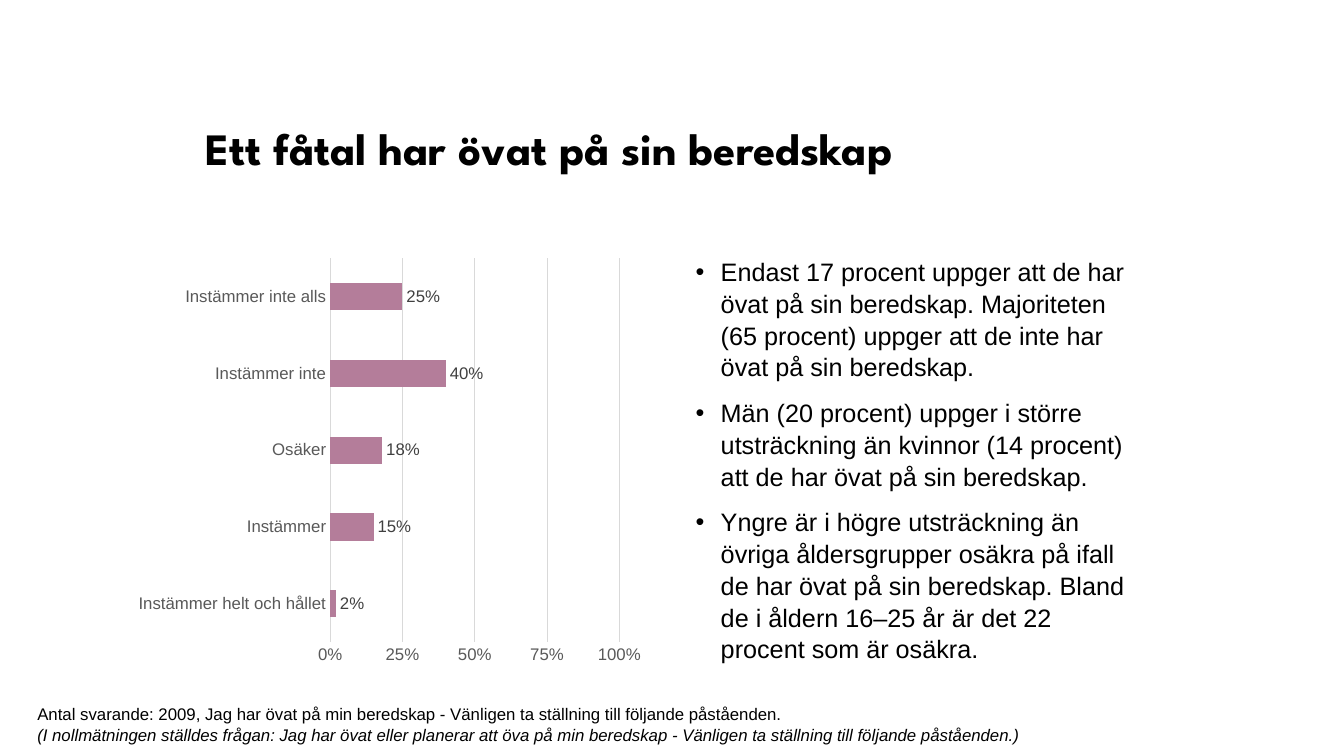
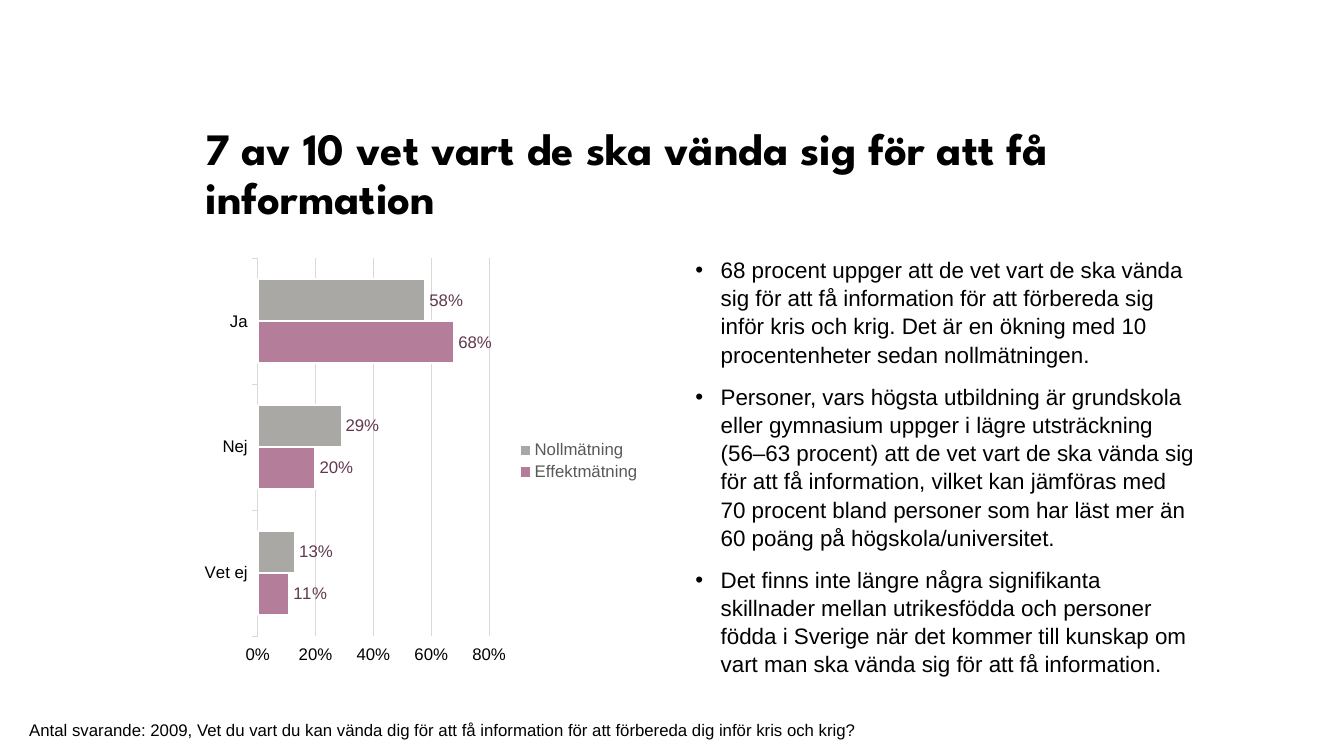
from dataclasses import dataclass
from typing import Any, Optional

import lxml.etree
import pptx
import pptx.chart.axis
import pptx.chart.data
import pptx.dml.color
import pptx.enum.chart
import pptx.oxml.ns
import pptx.slide
import pptx.text.text
import pptx.util

Inches = pptx.util.Inches
Pt = pptx.util.Pt
RGBColor = pptx.dml.color.RGBColor
TickMark = pptx.enum.chart.XL_TICK_MARK


@dataclass(frozen=True)
class Theme:
    heading_font: str = "League Spartan"
    body_font: str = "Arial"
    title_size: int = 32
    small_size: int = 12
    black: str = "000000"
    white: str = "FFFFFF"
    mauve: str = "B47D9A"
    plum: str = "61384D"
    grey: str = "A9A8A4"
    grid: str = "D9D9D9"
    dark_grey: str = "595959"
    label_grey: str = "404040"


THEME = Theme()


@dataclass(frozen=True)
class Box:
    left: float
    top: float
    width: float
    height: float

    def lengths(self) -> tuple:
        return tuple(Inches(value) for value in (self.left, self.top, self.width, self.height))


@dataclass(frozen=True)
class TextStyle:
    size: int
    color: str = THEME.black
    name: str = THEME.body_font
    bold: bool = False
    italic: bool = False


@dataclass(frozen=True)
class ParagraphStyle:
    line_spacing: float
    gap: int = 0
    bulleted: bool = False


@dataclass(frozen=True)
class Series:
    name: str
    values: tuple[float, ...]
    color: str


@dataclass(frozen=True)
class BarChart:
    left: float
    categories: tuple[str, ...]
    series: tuple[Series, ...]
    maximum: float
    step: float
    gap_width: int
    axis_color: str
    label_color: str
    tick_mark: Any
    outline: Optional[str] = None
    legend: bool = False


@dataclass(frozen=True)
class Page:
    title: str
    bullets: tuple[str, ...]
    bullet_size: int
    bullet_width: float
    chart: BarChart
    footer: tuple[str, ...]
    footer_box: Box


TITLE_BOX = Box(1.94, 1.21, 9.38, 1.06)
CONTENT_TOP, CONTENT_HEIGHT = 2.48, 4.19
CHART_RIGHT, BULLETS_LEFT = 6.46, 6.8
BULLET_INDENT = 0.25

TITLE_STYLE = TextStyle(THEME.title_size, name=THEME.heading_font, bold=True)
FOOTER_STYLES = (TextStyle(THEME.small_size), TextStyle(THEME.small_size, italic=True))

PAGES = (
    Page(
        title="Ett fåtal har övat på sin beredskap",
        bullets=(
            "Endast 17 procent uppger att de har övat på sin beredskap. Majoriteten "
            "(65 procent) uppger att de inte har övat på sin beredskap.",
            "Män (20 procent) uppger i större utsträckning än kvinnor (14 procent) "
            "att de har övat på sin beredskap.",
            "Yngre är i högre utsträckning än övriga åldersgrupper osäkra på ifall de har övat "
            "på sin beredskap. Bland de i åldern 16–25 år är det 22 procent som är osäkra.",
        ),
        bullet_size=18,
        bullet_width=4.52,
        chart=BarChart(
            left=1.27,
            categories=("Instämmer helt och hållet", "Instämmer", "Osäker",
                        "Instämmer inte", "Instämmer inte alls"),
            series=(Series("Series 1", (0.02, 0.15, 0.18, 0.4, 0.25), THEME.mauve),),
            maximum=1,
            step=0.25,
            gap_width=182,
            axis_color=THEME.dark_grey,
            label_color=THEME.label_grey,
            tick_mark=TickMark.NONE,
        ),
        footer=(
            "Antal svarande: 2009, Jag har övat på min beredskap - "
            "Vänligen ta ställning till följande påståenden.",
            "(I nollmätningen ställdes frågan: Jag har övat eller planerar att öva på min "
            "beredskap - Vänligen ta ställning till följande påståenden.)",
        ),
        footer_box=Box(0.37, 6.97, 10.76, 0.4),
    ),
    Page(
        title="7 av 10 vet vart de ska vända sig för att få information",
        bullets=(
            "68 procent uppger att de vet vart de ska vända sig för att få information för att "
            "förbereda sig inför kris och krig. Det är en ökning med 10 procentenheter sedan "
            "nollmätningen.",
            "Personer, vars högsta utbildning är grundskola eller gymnasium uppger i lägre "
            "utsträckning (56–63 procent) att de vet vart de ska vända sig för att få "
            "information, vilket kan jämföras med 70 procent bland personer som har läst mer "
            "än 60 poäng på högskola/universitet.",
            "Det finns inte längre några signifikanta skillnader mellan utrikesfödda och "
            "personer födda i Sverige när det kommer till kunskap om vart man ska vända sig "
            "för att få information.",
        ),
        bullet_size=16,
        bullet_width=5.16,
        chart=BarChart(
            left=1.94,
            categories=("Vet ej", "Nej", "Ja"),
            series=(
                Series("Effektmätning", (0.11, 0.2, 0.68), THEME.mauve),
                Series("Nollmätning", (0.13, 0.29, 0.58), THEME.grey),
            ),
            maximum=0.8,
            step=0.2,
            gap_width=100,
            axis_color=THEME.black,
            label_color=THEME.plum,
            tick_mark=TickMark.OUTSIDE,
            outline=THEME.white,
            legend=True,
        ),
        footer=(
            "Antal svarande: 2009, Vet du vart du kan vända dig för att få information "
            "för att förbereda dig inför kris och krig?",
        ),
        footer_box=Box(0.29, 7.13, 10.84, 0.2),
    ),
)


def set_attributes(target: Any, values: dict[str, Any]) -> None:
    for name, value in values.items():
        setattr(target, name, value)


def format_font(font: pptx.text.text.Font, style: TextStyle) -> None:
    set_attributes(font, {"name": style.name, "size": Pt(style.size),
                          "bold": style.bold, "italic": style.italic})
    font.color.rgb = RGBColor.from_string(style.color)


def format_line(line: Any, color: str, width: float) -> None:
    line.color.rgb = RGBColor.from_string(color)
    line.width = Pt(width)


def add_bullet(paragraph: Any) -> None:
    properties = paragraph._p.get_or_add_pPr()
    indent = Inches(BULLET_INDENT)
    properties.set("marL", str(indent))
    properties.set("indent", str(-indent))
    for tag, attribute, value in (("a:buFont", "typeface", THEME.body_font),
                                  ("a:buChar", "char", "•")):
        element = lxml.etree.SubElement(properties, pptx.oxml.ns.qn(tag))
        element.set(attribute, value)


def add_text(slide: pptx.slide.Slide, box: Box, texts: tuple[str, ...],
             styles: tuple[TextStyle, ...], layout: ParagraphStyle,
             inset: tuple[float, float] = (0.1, 0.05)) -> None:
    frame = slide.shapes.add_textbox(*box.lengths()).text_frame
    horizontal, vertical = (Inches(value) for value in inset)
    set_attributes(frame, {"word_wrap": True, "margin_left": horizontal,
                           "margin_right": horizontal, "margin_top": vertical,
                           "margin_bottom": vertical})
    for index, (text, style) in enumerate(zip(texts, styles)):
        paragraph = frame.add_paragraph() if index else frame.paragraphs[0]
        set_attributes(paragraph, {"line_spacing": layout.line_spacing,
                                   "space_before": Pt(layout.gap if index else 0)})
        if layout.bulleted:
            add_bullet(paragraph)
        run = paragraph.add_run()
        run.text = text
        format_font(run.font, style)


def format_axes(category_axis: pptx.chart.axis.CategoryAxis,
                value_axis: pptx.chart.axis.ValueAxis, content: BarChart) -> None:
    for axis in (category_axis, value_axis):
        set_attributes(axis, {"major_tick_mark": content.tick_mark,
                              "minor_tick_mark": TickMark.NONE})
        format_font(axis.tick_labels.font, TextStyle(THEME.small_size, content.axis_color))
    format_line(category_axis.format.line, THEME.grid, 0.75)
    set_attributes(value_axis, {"minimum_scale": 0, "maximum_scale": content.maximum,
                                "major_unit": content.step, "has_major_gridlines": True})
    value_axis.format.line.fill.background()
    format_line(value_axis.major_gridlines.format.line, THEME.grid, 0.75)
    set_attributes(value_axis.tick_labels, {"number_format": "0%",
                                            "number_format_is_linked": False})


def add_bar_chart(slide: pptx.slide.Slide, content: BarChart) -> None:
    data = pptx.chart.data.CategoryChartData(number_format="0%")
    data.categories = content.categories
    for entry in content.series:
        data.add_series(entry.name, entry.values)
    box = Box(content.left, CONTENT_TOP, CHART_RIGHT - content.left, CONTENT_HEIGHT)
    chart = slide.shapes.add_chart(
        pptx.enum.chart.XL_CHART_TYPE.BAR_CLUSTERED, *box.lengths(), data).chart
    set_attributes(chart, {"has_title": False, "has_legend": content.legend})
    format_font(chart.font, TextStyle(10))
    format_axes(chart.category_axis, chart.value_axis, content)

    plot = chart.plots[0]
    set_attributes(plot, {"gap_width": content.gap_width, "overlap": 0,
                          "vary_by_categories": False})
    for series, entry in zip(plot.series, content.series):
        series.format.fill.solid()
        series.format.fill.fore_color.rgb = RGBColor.from_string(entry.color)
        if content.outline:
            format_line(series.format.line, content.outline, 1.5)
        labels = series.data_labels
        set_attributes(labels, {"show_value": True, "number_format": "0%",
                                "number_format_is_linked": False,
                                "position": pptx.enum.chart.XL_LABEL_POSITION.OUTSIDE_END})
        format_font(labels.font, TextStyle(THEME.small_size, content.label_color))
    if content.legend:
        set_attributes(chart.legend, {"position": pptx.enum.chart.XL_LEGEND_POSITION.RIGHT,
                                      "include_in_layout": False})
        format_font(chart.legend.font, TextStyle(THEME.small_size, THEME.dark_grey))


def add_page(presentation: Any, page: Page) -> None:
    slide = presentation.slides.add_slide(presentation.slide_layouts[6])
    add_text(slide, TITLE_BOX, (page.title,), (TITLE_STYLE,), ParagraphStyle(0.9))
    bullet_box = Box(BULLETS_LEFT, CONTENT_TOP, page.bullet_width, CONTENT_HEIGHT)
    add_text(slide, bullet_box, page.bullets,
             (TextStyle(page.bullet_size),) * len(page.bullets),
             ParagraphStyle(1.05, gap=10, bulleted=True))
    add_bar_chart(slide, page.chart)
    add_text(slide, page.footer_box, page.footer, FOOTER_STYLES, ParagraphStyle(1.05),
             inset=(0, 0))


def main() -> None:
    presentation = pptx.Presentation()
    set_attributes(presentation, {"slide_width": Inches(13.33), "slide_height": Inches(7.5)})
    for page in PAGES:
        add_page(presentation, page)
    presentation.save("out.pptx")


if __name__ == "__main__":
    main()
